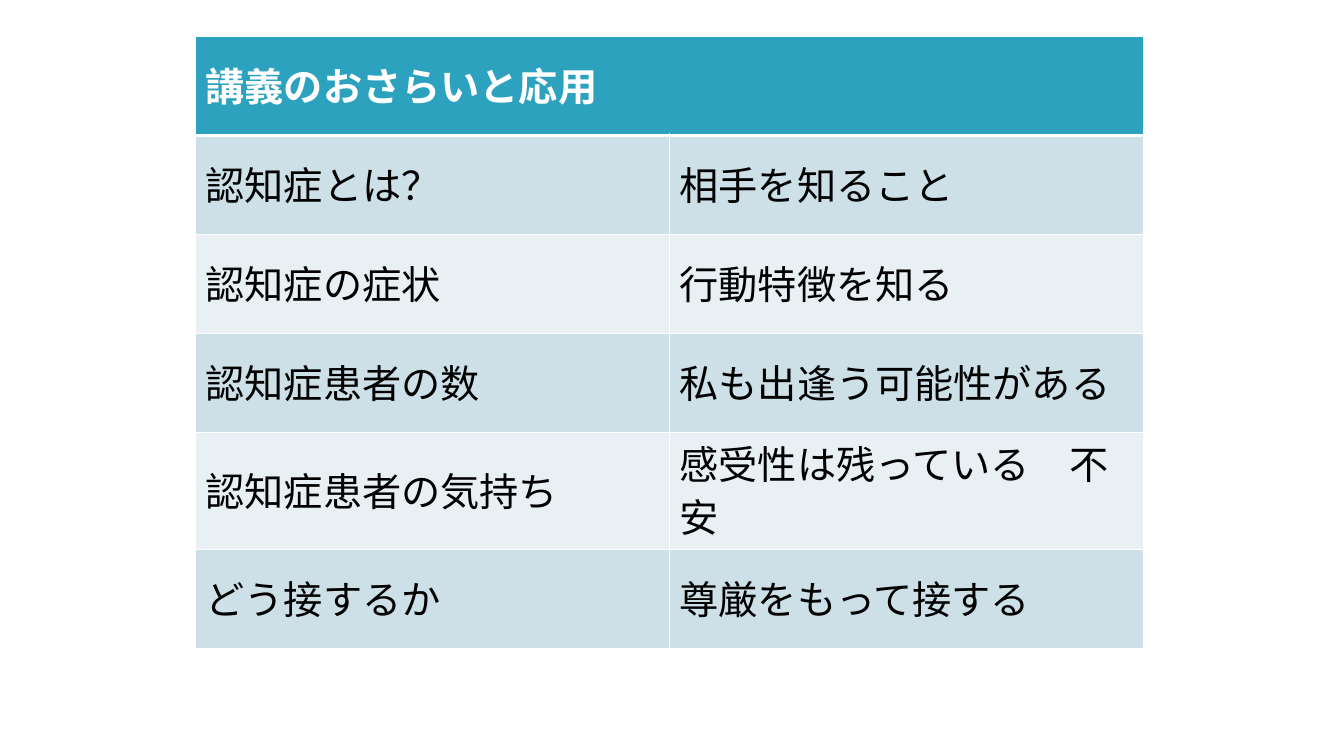
from lxml import etree
from pptx import Presentation
from pptx import util as u
from pptx.dml.color import RGBColor
from pptx.enum import text
from pptx.oxml import ns

TEAL = RGBColor(0x2D, 0xA2, 0xBF)
BLUE = RGBColor(0xCD, 0xE0, 0xE8)
PALE = RGBColor(0xE8, 0xF0, 0xF4)
WHITE = RGBColor(0xFF, 0xFF, 0xFF)
BLACK = RGBColor(0, 0, 0)
FACE = "Noto Sans Mono"

HEAD = "講義のおさらいと応用"
ROWS = [
    ("認知症とは？", "相手を知ること"),
    ("認知症の症状", "行動特徴を知る"),
    ("認知症患者の数", "私も出逢う可能性がある"),
    ("認知症患者の気持ち", "感受性は残っている　不安"),
    ("どう接するか", "尊厳をもって接する　"),
]


def edge(cell, side, width):
    """Draw one white cell border, width in points."""
    line = etree.SubElement(cell._tc.get_or_add_tcPr(), ns.qn("a:ln" + side))
    line.set("w", str(u.Pt(width)))
    fill = etree.SubElement(line, ns.qn("a:solidFill"))
    etree.SubElement(fill, ns.qn("a:srgbClr")).set("val", str(WHITE))


def style(cell, words, back, ink, bold, edges):
    """Fill a cell with its words, colour and borders."""
    for side, width in edges.items():
        edge(cell, side, width)
    cell.fill.solid()
    cell.fill.fore_color.rgb = back
    cell.vertical_anchor = text.MSO_ANCHOR.MIDDLE
    run = cell.text_frame.paragraphs[0].add_run()
    run.text = words
    form = {"size": u.Pt(28), "name": FACE, "bold": bold}
    for key, value in form.items():
        setattr(run.font, key, value)
    run.font.color.rgb = ink
    east = etree.SubElement(run.font._element, ns.qn("a:ea"))
    east.set("typeface", FACE)


def review(slide, left, top, width, height):
    """Place the lecture review table in the given box."""
    count = len(ROWS) + 1
    box = [u.Inches(n) for n in (left, top, width, height)]
    table = slide.shapes.add_table(count, 2, *box).table
    for row in table.rows:
        row.height = u.Inches(height / count)
    table.cell(0, 0).merge(table.cell(0, 1))
    thin = dict.fromkeys("LRTB", 1)
    style(table.cell(0, 0), HEAD, TEAL, WHITE, True, {**thin, "B": 3})
    edge(table.cell(0, 1), "B", 3)
    for r, pair in enumerate(ROWS, 1):
        back = BLUE if r % 2 else PALE
        edges = {**thin, "T": 3 if r == 1 else 1}
        for c, words in enumerate(pair):
            style(table.cell(r, c), words, back, BLACK, False, edges)


def main():
    """Build and save the slide."""
    deck = Presentation()
    deck.slide_width = u.Inches(13.33)
    deck.slide_height = u.Inches(7.5)
    slide = deck.slides.add_slide(deck.slide_layouts[6])
    review(slide, 1.94, 0.36, 9.4, 5.9)
    deck.save("out.pptx")


if __name__ == "__main__":
    main()
